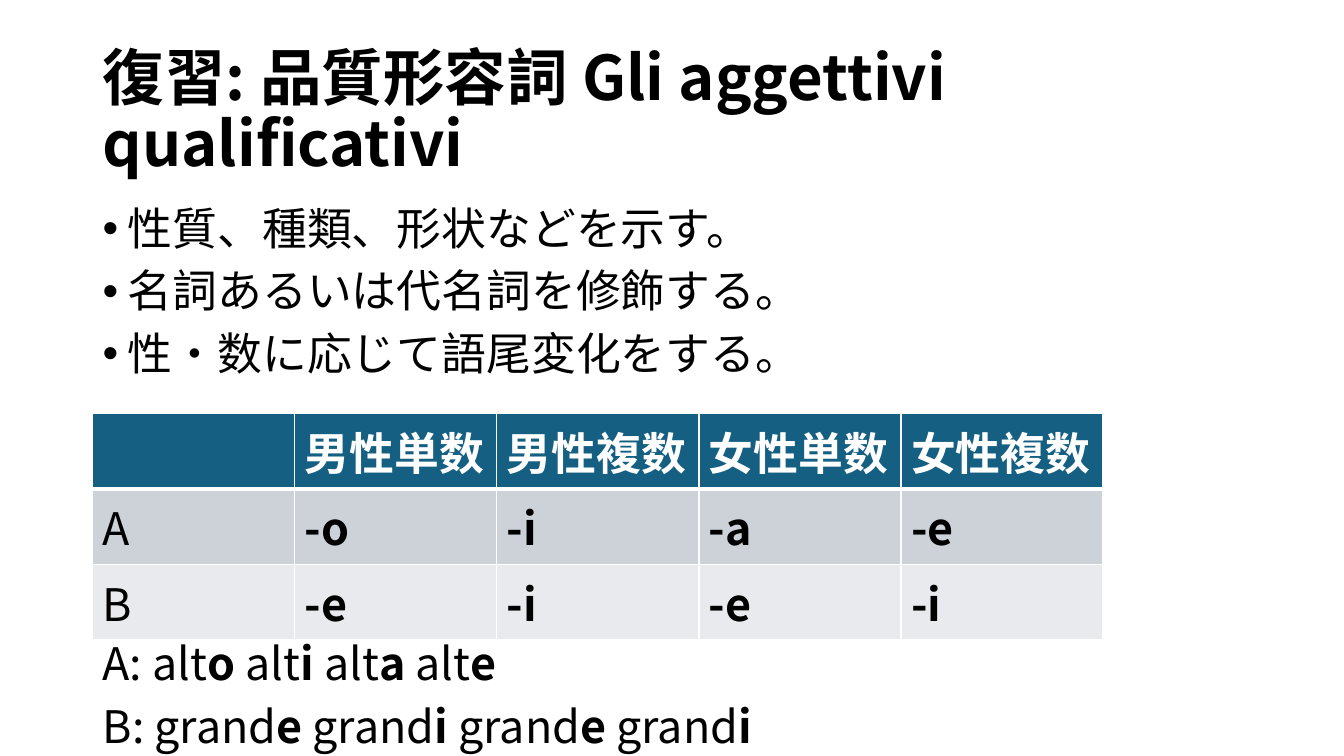
from dataclasses import dataclass

from lxml.etree import Element, SubElement
from pptx import Presentation
from pptx.dml.color import RGBColor
from pptx.enum.text import MSO_ANCHOR
from pptx.oxml.ns import qn
from pptx.util import Inches, Pt


@dataclass(frozen=True)
class Theme:
    font: str = "Noto Sans CJK JP"
    title_size: int = 44
    body_size: int = 32
    line_spacing: float = 0.9
    text: str = "000000"
    header_text: str = "FFFFFF"
    header_fill: str = "156082"
    border: str = "FFFFFF"
    row_fills: tuple[str, ...] = ("CCD2D8", "E8EAED")


@dataclass(frozen=True)
class Adjective:
    group: str
    stem: str
    endings: str


THEME = Theme()
LEFT = 0.92
WIDTH = 11.5
TITLE = "復習: 品質形容詞 Gli aggettivi qualificativi"
POINTS = (
    "性質、種類、形状などを示す。",
    "名詞あるいは代名詞を修飾する。",
    "性・数に応じて語尾変化をする。",
)
FORMS = ("", "男性単数", "男性複数", "女性単数", "女性複数")
ADJECTIVES = (Adjective("A", "alt", "oiae"), Adjective("B", "grand", "eiei"))


def set_font(p, size: int, color: str = THEME.text, bold: bool = False) -> None:
    font = p.font
    font.name = THEME.font
    font.size = Pt(size)
    font.bold = bold
    font.color.rgb = RGBColor.from_string(color)
    props = p._p.get_or_add_pPr().find(qn("a:defRPr"))
    SubElement(props, qn("a:ea"), typeface=THEME.font)


def add_text_frame(s, top: float, height: float):
    tf = s.shapes.add_textbox(
        Inches(LEFT), Inches(top), Inches(WIDTH), Inches(height)
    ).text_frame
    tf.word_wrap = True
    return tf


def add_body_paragraph(tf, index: int):
    p = tf.add_paragraph() if index else tf.paragraphs[0]
    p.line_spacing = THEME.line_spacing
    p.space_before = Pt(10 if index else 0)
    return p


def add_bullet(p) -> None:
    props = p._p.get_or_add_pPr()
    props.set("marL", str(Inches(0.25)))
    props.set("indent", str(-Inches(0.25)))
    SubElement(props, qn("a:buFont"), typeface="Arial")
    SubElement(props, qn("a:buChar"), char="•")


def set_border(cell, side: str, width: float) -> None:
    line = Element(qn(f"a:{side}"), w=str(Pt(width)))
    fill = SubElement(line, qn("a:solidFill"))
    SubElement(fill, qn("a:srgbClr"), val=THEME.border)
    cell._tc.get_or_add_tcPr().insert(0, line)


def add_title(s) -> None:
    tf = add_text_frame(s, 0.4, 1.45)
    tf.vertical_anchor = MSO_ANCHOR.MIDDLE
    p = tf.paragraphs[0]
    p.text = TITLE
    p.line_spacing = THEME.line_spacing
    set_font(p, THEME.title_size, bold=True)


def add_points(s) -> None:
    tf = add_text_frame(s, 2, 1.9)
    for i, point in enumerate(POINTS):
        p = add_body_paragraph(tf, i)
        p.text = point
        add_bullet(p)
        set_font(p, THEME.body_size)


def add_endings_table(s) -> None:
    rows = [FORMS]
    rows += [(a.group, *(f"-{ending}" for ending in a.endings)) for a in ADJECTIVES]
    fills = (THEME.header_fill, *THEME.row_fills)
    table = s.shapes.add_table(
        len(rows), len(FORMS), Inches(LEFT), Inches(4.1), Inches(10.02), Inches(2.25)
    ).table
    for i, (row, fill) in enumerate(zip(rows, fills)):
        for j, text in enumerate(row):
            cell = table.cell(i, j)
            cell.fill.solid()
            cell.fill.fore_color.rgb = RGBColor.from_string(fill)
            set_border(cell, "lnB", 1 if i else 3)
            set_border(cell, "lnT", 3 if i == 1 else 1)
            p = cell.text_frame.paragraphs[0]
            p.text = text
            color = THEME.text if i else THEME.header_text
            set_font(p, THEME.body_size, color, bold=i == 0 or j > 0)


def add_examples(s) -> None:
    tf = add_text_frame(s, 6.32, 1.18)
    for i, adjective in enumerate(ADJECTIVES):
        p = add_body_paragraph(tf, i)
        set_font(p, THEME.body_size)
        lead = f"{adjective.group}: "
        for ending in adjective.endings:
            p.add_run().text = lead + adjective.stem
            r = p.add_run()
            r.text = ending
            r.font.bold = True
            lead = " "


def main() -> None:
    prs = Presentation()
    prs.slide_width = Inches(13.33)
    prs.slide_height = Inches(7.5)
    s = prs.slides.add_slide(prs.slide_layouts[6])
    add_title(s)
    add_points(s)
    add_endings_table(s)
    add_examples(s)
    prs.save("out.pptx")


if __name__ == "__main__":
    main()
